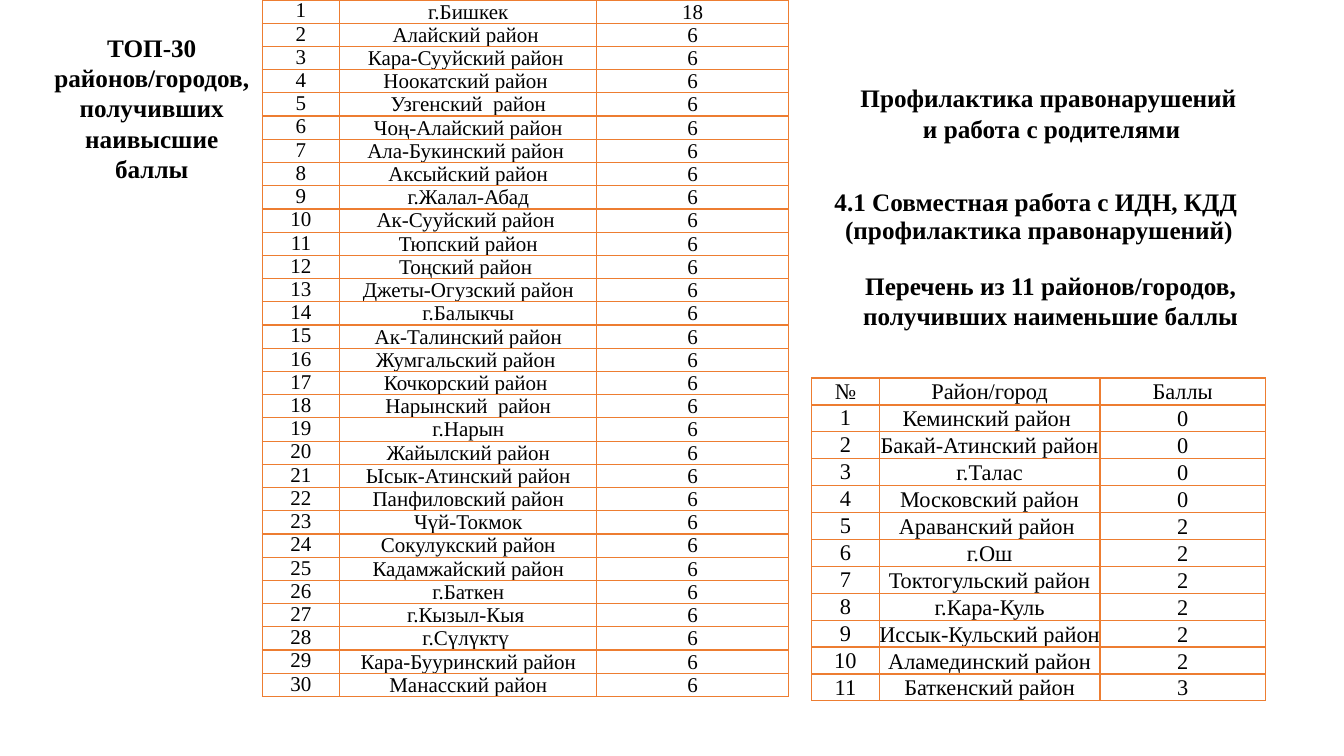
from lxml import etree
from pptx import Presentation
from pptx.dml.color import RGBColor
from pptx.enum.text import MSO_ANCHOR, MSO_AUTO_SIZE, PP_ALIGN
from pptx.oxml.ns import qn
from pptx.util import Inches, Pt

CENTER = PP_ALIGN.CENTER
MIDDLE, BOTTOM = MSO_ANCHOR.MIDDLE, MSO_ANCHOR.BOTTOM
GROW, FIXED = MSO_AUTO_SIZE.SHAPE_TO_FIT_TEXT, MSO_AUTO_SIZE.NONE
FONT, BLACK, ORANGE = "Times New Roman", "000000", "ED7D31"

TOP = [
    ("г.Бишкек", 18),
    *((name, 6) for name in (
        "Алайский район ", "Кара-Сууйский район ", "Ноокатский район ",
        "Узгенский  район", "Чоң-Алайский район", "Ала-Букинский район ",
        "Аксыйский район", "г.Жалал-Абад", "Ак-Сууйский район ",
        "Тюпский район", "Тоңский район ", "Джеты-Огузский район",
        "г.Балыкчы", "Ак-Талинский район", "Жумгальский район ",
        "Кочкорский район ", "Нарынский  район", "г.Нарын",
        "Жайылский район", "Ысык-Атинский район", "Панфиловский район",
        "Чүй-Токмок", "Сокулукский район", "Кадамжайский район",
        "г.Баткен", "г.Кызыл-Кыя ", "г.Сүлүктү ",
        "Кара-Бууринский район", "Манасский район")),
]
LOW = [
    ("Кеминский район ", 0), ("Бакай-Атинский район", 0), ("г.Талас", 0),
    ("Московский район", 0), ("Араванский район ", 2), ("г.Ош", 2),
    ("Токтогульский район", 2), ("г.Кара-Куль", 2),
    ("Иссык-Кульский район", 2), ("Аламединский район", 2),
    ("Баткенский район", 3),
]


def color(code):
    return RGBColor.from_string(code)


def style(frame, size, bold, spacing=1.0):
    for para in frame.paragraphs:
        para.alignment = CENTER
        para.line_spacing = spacing
        for run in para.runs:
            font = run.font
            font.name, font.size, font.bold = FONT, Pt(size), bold
            font.color.rgb = color(BLACK)


def border(cell):
    props = cell._tc.get_or_add_tcPr()
    for side in ("a:lnL", "a:lnR", "a:lnT", "a:lnB"):
        line = etree.SubElement(props, qn(side), w=str(Pt(1)))
        fill = etree.SubElement(line, qn("a:solidFill"))
        etree.SubElement(fill, qn("a:srgbClr"), val=ORANGE)


def add_grid(slide, rows, left, top, widths, height, size, spacing=1.0):
    """Draw a bordered table whose rows share the height equally."""
    frame = slide.shapes.add_table(
        len(rows), len(widths), Inches(left), Inches(top),
        Inches(sum(widths)), Inches(height))
    table = frame.table
    table.first_row = table.horz_banding = False
    for col, width in zip(table.columns, widths):
        col.width = Inches(width)
    for r, row in enumerate(rows):
        table.rows[r].height = Inches(height / len(rows))
        for c, value in enumerate(row):
            cell = table.cell(r, c)
            cell.margin_left = cell.margin_right = 0
            cell.margin_top = cell.margin_bottom = 0
            head = c == 0 or row[0] == "№"
            cell.vertical_anchor = MIDDLE if head else BOTTOM
            cell.text_frame.text = str(value)
            style(cell.text_frame, size, False, spacing)
            border(cell)
            cell.fill.background()


def add_label(slide, text, left, top, width, height, indent=0):
    box = slide.shapes.add_textbox(
        Inches(left), Inches(top), Inches(width), Inches(height))
    frame = box.text_frame
    frame.word_wrap = True
    frame.auto_size = GROW
    frame.text = text
    style(frame, 18, True)
    if indent:
        for para in frame.paragraphs:
            para._p.get_or_add_pPr().set("marL", str(Inches(indent)))


def set_title(slide, text, left, top, width, height):
    title = slide.shapes.title
    title.left, title.top = Inches(left), Inches(top)
    title.width, title.height = Inches(width), Inches(height)
    frame = title.text_frame
    frame.auto_size = FIXED
    frame.word_wrap = True
    frame.vertical_anchor = MIDDLE
    frame.text = text
    style(frame, 18, True, 0.9)


def number(rows):
    return [(i, *row) for i, row in enumerate(rows, 1)]


def add_best(slide, left, top):
    add_label(slide, "ТОП-30 районов/городов, получивших наивысшие баллы",
              left, top + 0.27, 2.19, 1.62)
    add_grid(slide, number(TOP), left + 2.19, top, (0.77, 2.55, 1.9),
             6.91, 15, spacing=0.9)


def add_worst(slide, left, top):
    add_label(slide, "Профилактика правонарушений \nи работа с родителями",
              left, top, 4.59, 0.71, indent=0.17)
    set_title(slide, "4.1 Совместная работа с ИДН, КДД \v"
              "(профилактика правонарушений)",
              left - 0.57, top + 1.12, 5.65, 0.53)
    add_label(slide, "Перечень из 11 районов/городов, "
              "получивших наименьшие баллы",
              left + 0.12, top + 1.86, 4.5, 0.71)
    rows = [("№", "Район/город", "Баллы"), *number(LOW)]
    add_grid(slide, rows, left, top + 2.98, (0.67, 2.19, 1.64), 3.2, 16)


def main():
    deck = Presentation()
    deck.slide_width, deck.slide_height = Inches(13.33), Inches(7.5)
    slide = deck.slides.add_slide(deck.slide_layouts[5])
    add_best(slide, 0.41, 0)
    add_worst(slide, 8.05, 0.77)
    deck.save("out.pptx")


if __name__ == "__main__":
    main()
